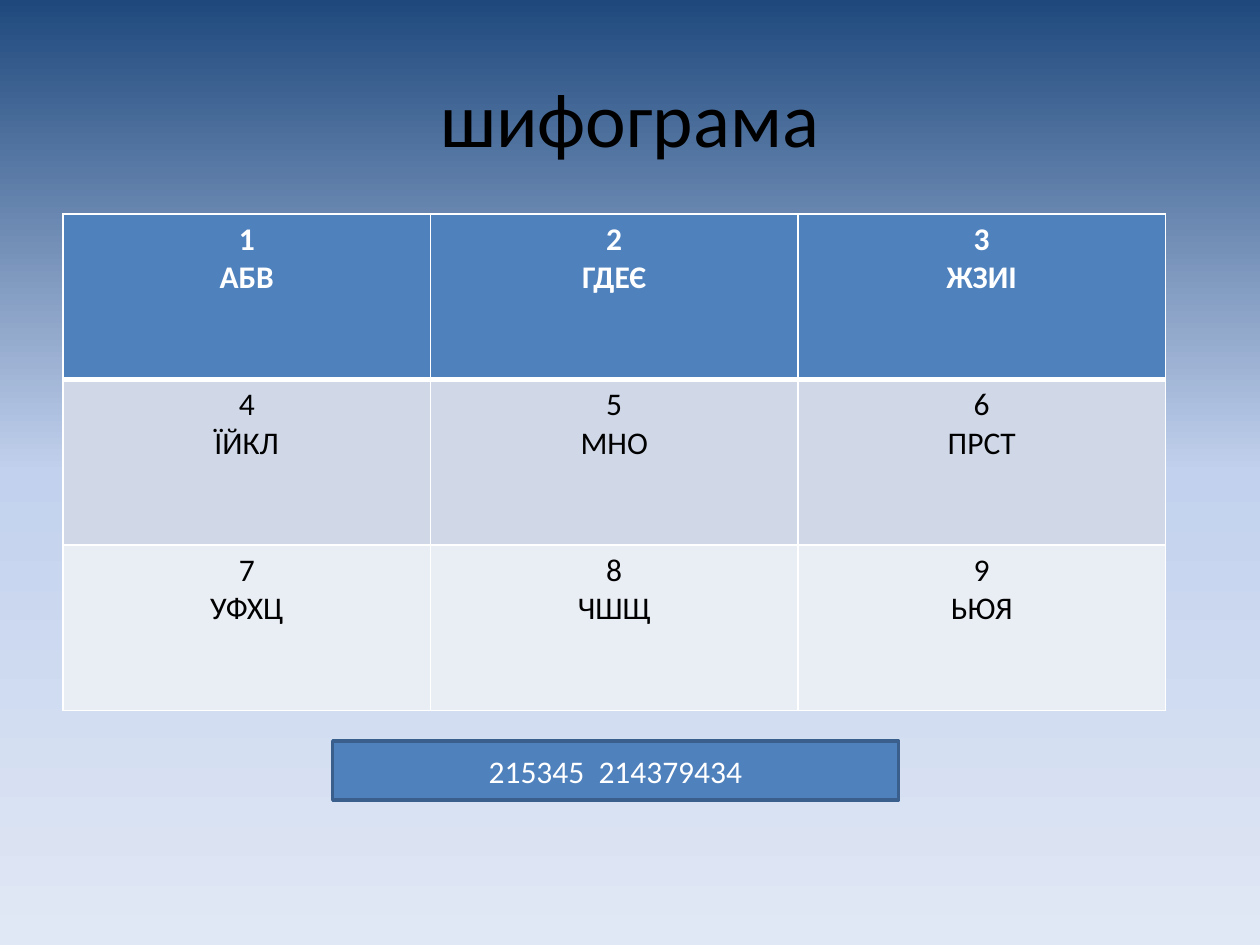
import dataclasses

import pptx
import pptx.dml.color
import pptx.enum.shapes
import pptx.enum.text
import pptx.oxml
import pptx.oxml.ns
import pptx.util
import copy


@dataclasses.dataclass(frozen=True)
class Theme:
    font: str = "Calibri"
    title_size: int = 44
    body_size: int = 18
    dark: str = "000000"
    light: str = "FFFFFF"
    accent: str = "4F81BD"
    accent_edge: str = "3A5F8C"
    row_fills: tuple = ("4F81BD", "D0D8E8", "E9EDF4")
    sky: tuple = ((0, "1F497D"), (0.5, "C2D1ED"), (1, "E1E8F5"))


@dataclasses.dataclass(frozen=True)
class Area:
    left: float
    top: float
    width: float
    height: float

    def lengths(self) -> tuple:
        return tuple(pptx.util.Inches(value) for value in
                     (self.left, self.top, self.width, self.height))


@dataclasses.dataclass(frozen=True)
class Key:
    digit: str
    letters: str


THEME = Theme()
WIDTH, HEIGHT = 10, 7.5
COLUMNS = 3
TITLE_AREA = Area(WIDTH * 0.05, HEIGHT * 0.04, WIDTH * 0.9, 1.25)
KEYPAD_AREA = Area(WIDTH * 0.05, 1.7, WIDTH * 0.875, 3.94)
MESSAGE_AREA = Area(2.64, 5.88, 4.49, 0.47)
LETTERS = ("АБВ", "ГДЕЄ", "ЖЗИІ", "ЇЙКЛ", "МНО", "ПРСТ", "УФХЦ", "ЧШЩ", "ЬЮЯ")
KEYS = [Key(str(number), letters) for number, letters in enumerate(LETTERS, 1)]


def color(code: str) -> pptx.dml.color.RGBColor:
    return pptx.dml.color.RGBColor.from_string(code)


def write(frame, text: str, *, size: int = THEME.body_size,
          ink: str = THEME.light, bold: bool = False) -> None:
    frame.word_wrap = True
    for index, line in enumerate(text.split("\n")):
        para = frame.add_paragraph() if index else frame.paragraphs[0]
        para.alignment = pptx.enum.text.PP_ALIGN.CENTER
        span = para.add_run()
        span.text = line
        span.font.name = THEME.font
        span.font.size = pptx.util.Pt(size)
        span.font.bold = bold
        span.font.color.rgb = color(ink)


def paint_background(page) -> None:
    fill = page.background.fill
    fill.gradient()
    fill.gradient_angle = 270
    stops = next(page.element.iter(pptx.oxml.ns.qn("a:gsLst")))
    stops.append(copy.deepcopy(stops[-1]))
    for stop, (position, code) in zip(fill.gradient_stops, THEME.sky):
        stop.position = position
        stop.color.rgb = color(code)


def add_title(page, text: str) -> None:
    title = page.shapes.title
    title.left, title.top, title.width, title.height = TITLE_AREA.lengths()
    title.text_frame.vertical_anchor = pptx.enum.text.MSO_ANCHOR.MIDDLE
    write(title.text_frame, text, size=THEME.title_size, ink=THEME.dark)


def draw_borders(cell, **points: float) -> None:
    properties = cell._tc.get_or_add_tcPr()
    for side in "LRTB":
        width = pptx.util.Pt(points.get(side, 1))
        properties.append(pptx.oxml.parse_xml(
            f'<a:ln{side} {pptx.oxml.ns.nsdecls("a")} w="{width}"><a:solidFill>'
            f'<a:srgbClr val="{THEME.light}"/></a:solidFill></a:ln{side}>'))


def add_keypad(page, keys: list[Key]) -> None:
    rows = len(keys) // COLUMNS
    table = page.shapes.add_table(rows, COLUMNS, *KEYPAD_AREA.lengths()).table
    for column in table.columns:
        column.width = pptx.util.Inches(KEYPAD_AREA.width / COLUMNS)
    for row in table.rows:
        row.height = pptx.util.Inches(KEYPAD_AREA.height / rows)
    for index, key in enumerate(keys):
        row, column = divmod(index, COLUMNS)
        header = row == 0
        cell = table.cell(row, column)
        draw_borders(cell, B=3 if header else 1, T=3 if row == 1 else 1)
        cell.fill.solid()
        cell.fill.fore_color.rgb = color(THEME.row_fills[row])
        write(cell.text_frame, f"{key.digit}\n{key.letters}", bold=header,
              ink=THEME.light if header else THEME.dark)


def add_message(page, text: str) -> None:
    box = page.shapes.add_shape(
        pptx.enum.shapes.MSO_SHAPE.RECTANGLE, *MESSAGE_AREA.lengths())
    box.shadow.inherit = False
    box.fill.solid()
    box.fill.fore_color.rgb = color(THEME.accent)
    box.line.color.rgb = color(THEME.accent_edge)
    box.line.width = pptx.util.Pt(2)
    box.text_frame.vertical_anchor = pptx.enum.text.MSO_ANCHOR.MIDDLE
    write(box.text_frame, text)


def main() -> None:
    deck = pptx.Presentation()
    deck.slide_width = pptx.util.Inches(WIDTH)
    deck.slide_height = pptx.util.Inches(HEIGHT)
    page = deck.slides.add_slide(deck.slide_layouts.get_by_name("Title Only"))
    paint_background(page)
    add_title(page, "шифограма")
    add_keypad(page, KEYS)
    add_message(page, "215345  214379434")
    deck.save("out.pptx")


if __name__ == "__main__":
    main()
